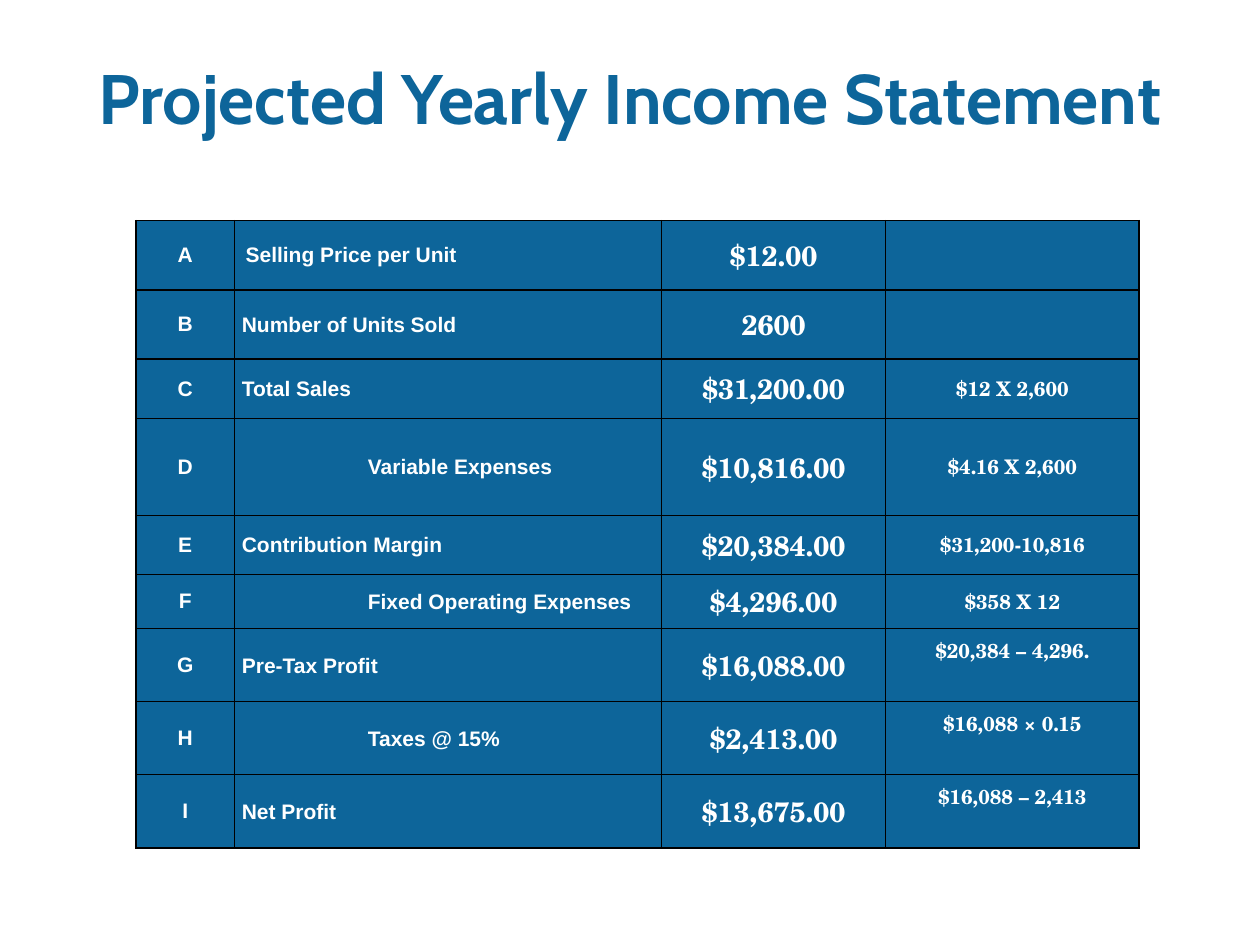
import pptx
import pptx.util
import pptx.dml.color
import pptx.enum.text
import pptx.oxml
import pptx.oxml.ns
from pptx.util import Inches

COLORS = {"blue": "0D659A", "white": "FFFFFF", "black": "000000"}
TITLE = "Projected Yearly Income Statement"
STATEMENT = [
    ("A", "Selling Price per Unit", "$12.00", "", 0.55),
    ("B", "Number of Units Sold", "2600", "", 0.55),
    ("C", "Total Sales", "$31,200.00", "$12 X 2,600", 0.47),
    ("D", "\tVariable Expenses", "$10,816.00", "$4.16 X 2,600", 0.77),
    ("E", "Contribution Margin", "$20,384.00", "$31,200-10,816", 0.47),
    ("F", "\tFixed Operating Expenses", "$4,296.00", "$358 X 12", 0.43),
    ("G", "Pre-Tax Profit", "$16,088.00", "$20,384 – 4,296.", 0.58),
    ("H", "\tTaxes @ 15%", "$2,413.00", "$16,088 × 0.15", 0.58),
    ("I", "Net Profit", "$13,675.00", "$16,088 – 2,413", 0.58),
]
COLUMNS = [
    (0.78, "Arial", 12),
    (3.39, "Arial", 12),
    (1.78, "TeX Gyre Schola", 16),
    (2.01, "TeX Gyre Schola", 11.5),
]
LABEL, WORKING = 1, 3
RAISED_LINES = "GHI"
ALIGN = pptx.enum.text.PP_ALIGN
MIDDLE = pptx.enum.text.MSO_ANCHOR.MIDDLE


def rgb(name):
    return pptx.dml.color.RGBColor.from_string(COLORS[name])


def style(font, family, size, color):
    font.name = family
    font.size = pptx.util.Pt(size)
    font.bold = True
    font.color.rgb = rgb(color)


def set_margins(cell, left, top, right, bottom):
    cell.margin_left, cell.margin_top = Inches(left), Inches(top)
    cell.margin_right, cell.margin_bottom = Inches(right), Inches(bottom)


def add_borders(cell):
    properties = cell._tc.get_or_add_tcPr()
    for position, side in enumerate(("lnL", "lnR", "lnT", "lnB")):
        properties.insert(position, pptx.oxml.parse_xml(
            f'<a:{side} {pptx.oxml.ns.nsdecls("a")} w="12700"><a:solidFill>'
            f'<a:srgbClr val="{COLORS["black"]}"/></a:solidFill></a:{side}>'))


def add_tab_stop(paragraph, position):
    paragraph._p.get_or_add_pPr().append(pptx.oxml.parse_xml(
        f'<a:tabLst {pptx.oxml.ns.nsdecls("a")}>'
        f'<a:tab pos="{Inches(position)}" algn="l"/></a:tabLst>'))


def add_title(slide):
    title = slide.shapes.title
    title.left, title.top = Inches(0.5), Inches(0.3)
    title.width, title.height = Inches(9), Inches(1.12)
    frame = title.text_frame
    frame.text = TITLE
    frame.auto_size = pptx.enum.text.MSO_AUTO_SIZE.NONE
    frame.vertical_anchor = MIDDLE
    heading = frame.paragraphs[0]
    heading.alignment = ALIGN.CENTER
    heading.line_spacing = pptx.util.Pt(34)
    style(heading.runs[0].font, "Cabin", 40, "blue")


def fill_cell(cell, text, line, column):
    _, family, size = COLUMNS[column]
    cell.fill.solid()
    cell.fill.fore_color.rgb = rgb("blue")
    add_borders(cell)
    cell.vertical_anchor = MIDDLE
    if column == LABEL and line != "A":
        set_margins(cell, 0.06, 0.01, 0.06, 0)
    else:
        raised = column == WORKING and line in RAISED_LINES
        set_margins(cell, 0.09, 0.04, 0.09, 0.28 if raised else 0.04)
    cell.text_frame.text = text
    paragraph = cell.text_frame.paragraphs[0]
    paragraph.alignment = ALIGN.LEFT if column == LABEL else ALIGN.CENTER
    if text.startswith("\t"):
        add_tab_stop(paragraph, 1)
    for run in paragraph.runs:
        style(run.font, family, size, "white")


def add_statement(slide):
    width = sum(column[0] for column in COLUMNS)
    height = sum(row[-1] for row in STATEMENT)
    table = slide.shapes.add_table(
        len(STATEMENT), len(COLUMNS), Inches(1.08), Inches(1.75),
        Inches(width), Inches(height)).table
    table.first_row = table.horz_banding = False
    for index, column in enumerate(COLUMNS):
        table.columns[index].width = Inches(column[0])
    for row, (*texts, row_height) in enumerate(STATEMENT):
        table.rows[row].height = Inches(row_height)
        for column, text in enumerate(texts):
            fill_cell(table.cell(row, column), text, texts[0], column)


def main():
    deck = pptx.Presentation()
    deck.slide_width, deck.slide_height = Inches(10), Inches(7.5)
    slide = deck.slides.add_slide(deck.slide_layouts.get_by_name("Title Only"))
    add_title(slide)
    add_statement(slide)
    deck.save("out.pptx")


if __name__ == "__main__":
    main()
